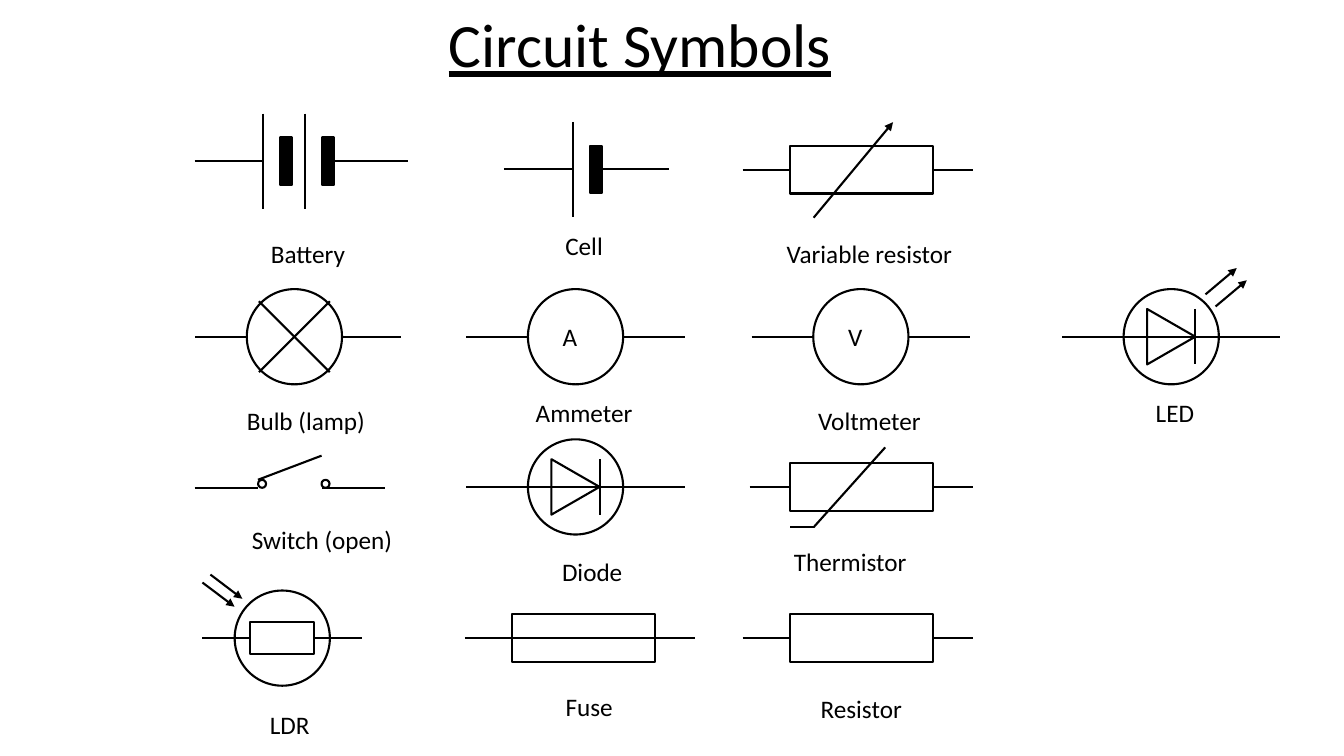
import pptx
import pptx.util
import pptx.dml.color
import pptx.enum.shapes
import pptx.enum.text
import lxml.etree
from dataclasses import dataclass

Pt = pptx.util.Pt
SHAPE = pptx.enum.shapes.MSO_SHAPE
ALIGN = pptx.enum.text.PP_ALIGN
ANCHOR = pptx.enum.text.MSO_ANCHOR


@dataclass(frozen=True)
class Theme:
    ink: str = "000000"
    paper: str = "FFFFFF"
    font: str = "Calibri"
    title_size: float = 44
    label_size: float = 18
    stroke: float = 1.5


THEME = Theme()
TITLE = "Circuit Symbols"
TITLE_BOX = (133.2, -5, 648, 77.8)
LABEL_W, LABEL_H = 147.6, 28.8
RADIUS = 34
BOX_W, BOX_H = 102, 34
PLATE_GAP = 30

# symbol kind, origin of the symbol, label, label centre x, label top
SYMBOLS = [
    ("battery", (188, 115.2), "Battery", 220, 167),
    ("cell", (409, 121), "Cell", 417.2, 161.3),
    ("variable", (615.5, 121.3), "Variable resistor", 621, 167),
    ("bulb", (210.3, 240.5), "Bulb (lamp)", 218.5, 285.8),
    ("ammeter", (411.1, 240.5), "Ammeter", 417.2, 280.3),
    ("voltmeter", (614.9, 240.5), "Voltmeter", 621, 285.8),
    ("led", (836.6, 240.5), "LED", 839.2, 280.5),
    ("switch", (207, 348.5), "Switch (open)", 230, 370.8),
    ("diode", (411.1, 347.8), "Diode", 423, 393.8),
    ("thermistor", (615.5, 348), "Thermistor", 607.3, 386.6),
    ("ldr", (201.6, 455.8), "LDR", 207, 503.3),
    ("fuse", (417, 455.8), "Fuse", 420.8, 490.3),
    ("resistor", (615.5, 455.8), "Resistor", 615.2, 491.8),
]


def rgb(color):
    return pptx.dml.color.RGBColor.from_string(color)


def write(tf, text, size, underline=None):
    p = tf.paragraphs[0]
    p.alignment = ALIGN.CENTER
    r = p.add_run()
    r.text = text
    r.font.name, r.font.size = THEME.font, Pt(size)
    r.font.color.rgb = rgb(THEME.ink)
    r.font.underline = underline
    return p


class Pen:
    """Draws one grouped symbol; all coordinates are offsets from its origin."""

    def __init__(self, slide, origin):
        self.shapes = slide.shapes.add_group_shape().shapes
        self.x, self.y = origin

    def line(self, x1, y1, x2, y2, arrow=False):
        c = self.shapes.add_connector(
            pptx.enum.shapes.MSO_CONNECTOR.STRAIGHT,
            Pt(self.x + x1), Pt(self.y + y1), Pt(self.x + x2), Pt(self.y + y2))
        c.line.color.rgb, c.line.width = rgb(THEME.ink), Pt(THEME.stroke)
        ns = pptx.oxml.ns.qn
        if arrow:
            lxml.etree.SubElement(c.line._get_or_add_ln(), ns("a:tailEnd"), type="triangle")
        lxml.etree.SubElement(c._element.spPr, ns("a:effectLst"))

    def leads(self, left, right, gap):
        self.line(left, 0, -gap, 0)
        self.line(gap, 0, right, 0)

    def outline(self, kind, w, h, dx=0, dy=0, fill=None):
        """Places a preset shape centred on the offset dx, dy."""
        sp = self.shapes.add_shape(
            kind, Pt(self.x + dx - w / 2), Pt(self.y + dy - h / 2), Pt(w), Pt(h))
        sp.shadow.inherit = False
        sp.line.color.rgb, sp.line.width = rgb(THEME.ink), Pt(THEME.stroke)
        if fill:
            sp.fill.solid()
            sp.fill.fore_color.rgb = rgb(fill)
        else:
            sp.fill.background()
        return sp

    def circle(self, fill=None):
        return self.outline(SHAPE.OVAL, 2 * RADIUS, 2 * RADIUS, fill=fill)

    def box(self, fill=None):
        return self.outline(SHAPE.RECTANGLE, BOX_W, BOX_H, fill=fill)


def cells(pen, count, right):
    pen.line(-49, 0, 0, 0)
    pen.line((count - 1) * PLATE_GAP + 14, 0, right, 0)
    for i in range(count):
        x = i * PLATE_GAP
        pen.line(x, -34, x, 34)
        pen.outline(SHAPE.RECTANGLE, 8.6, 34, x + 16.5, fill=THEME.ink)


def bulb(pen):
    pen.leads(-71, 76, RADIUS)
    pen.circle()
    pen.line(-25.3, 25.3, 25.3, -25.3)
    pen.line(-25.3, -25.3, 25.3, 25.3)


def meter(pen, letter):
    pen.line(-78, 0, 78, 0)
    tf = pen.circle(THEME.paper).text_frame
    tf.word_wrap = False
    tf.vertical_anchor = ANCHOR.MIDDLE
    tf.margin_left, tf.margin_right = Pt(0), Pt(8)
    write(tf, letter, THEME.label_size)


def diode(pen):
    pen.line(-78, 0, 78, 0)
    pen.circle()
    pen.outline(SHAPE.ISOSCELES_TRIANGLE, 39.6, 34.4).rotation = 90
    pen.line(17.2, -19.8, 17.2, 19.8)


def led(pen):
    diode(pen)
    pen.line(31.7, -21.6, 54, -40.3, arrow=True)
    pen.line(24.5, -30.2, 46.8, -49, arrow=True)


def switch(pen):
    pen.leads(-68, 68, 22.7)
    pen.line(-22.7, -5.8, 22.7, -23)
    for x in (-19.8, 25.5):
        pen.outline(SHAPE.OVAL, 5.7, 5.7, x, -2.9)


def ldr(pen):
    pen.leads(-57, 57, 22.7)
    pen.outline(SHAPE.RECTANGLE, 45.4, 22.7)
    pen.circle()
    pen.line(-57, -39.7, -34, -22.4, arrow=True)
    pen.line(-51.3, -45.4, -28.5, -28.1, arrow=True)


def resistor(pen):
    pen.line(-85, 0, 79.4, 0)
    pen.box(THEME.paper)


def variable(pen):
    resistor(pen)
    pen.line(-34.3, 34.2, 22.4, -34, arrow=True)


def thermistor(pen):
    pen.leads(-80, 79.4, BOX_W / 2)
    pen.box()
    pen.line(16.8, -28.4, -34.3, 28.6)
    pen.line(-34.3, 28.6, -51, 28.6)


def fuse(pen):
    pen.line(-85, 0, 79.4, 0)
    pen.box()


DRAW = {
    "battery": lambda pen: cells(pen, 2, 103.7),
    "cell": lambda pen: cells(pen, 1, 69),
    "ammeter": lambda pen: meter(pen, "A"),
    "voltmeter": lambda pen: meter(pen, "V"),
    "variable": variable, "bulb": bulb, "led": led, "switch": switch,
    "diode": diode, "thermistor": thermistor, "ldr": ldr, "fuse": fuse,
    "resistor": resistor,
}


def add_label(slide, text, centre, top):
    tf = slide.shapes.add_textbox(
        Pt(centre - LABEL_W / 2), Pt(top), Pt(LABEL_W), Pt(LABEL_H)).text_frame
    tf.word_wrap = True
    tf.auto_size = pptx.enum.text.MSO_AUTO_SIZE.SHAPE_TO_FIT_TEXT
    write(tf, text, THEME.label_size)


def add_title(slide):
    title = slide.shapes.title
    title.left, title.top, title.width, title.height = map(Pt, TITLE_BOX)
    title.text_frame.vertical_anchor = ANCHOR.MIDDLE
    write(title.text_frame, TITLE, THEME.title_size, underline=True).line_spacing = 0.9


def main():
    prs = pptx.Presentation()
    prs.slide_width, prs.slide_height = Pt(960), Pt(540)
    slide = prs.slides.add_slide(prs.slide_layouts.get_by_name("Title Only"))
    add_title(slide)
    for kind, origin, text, centre, top in SYMBOLS:
        DRAW[kind](Pen(slide, origin))
        add_label(slide, text, centre, top)
    prs.save("out.pptx")


if __name__ == "__main__":
    main()
